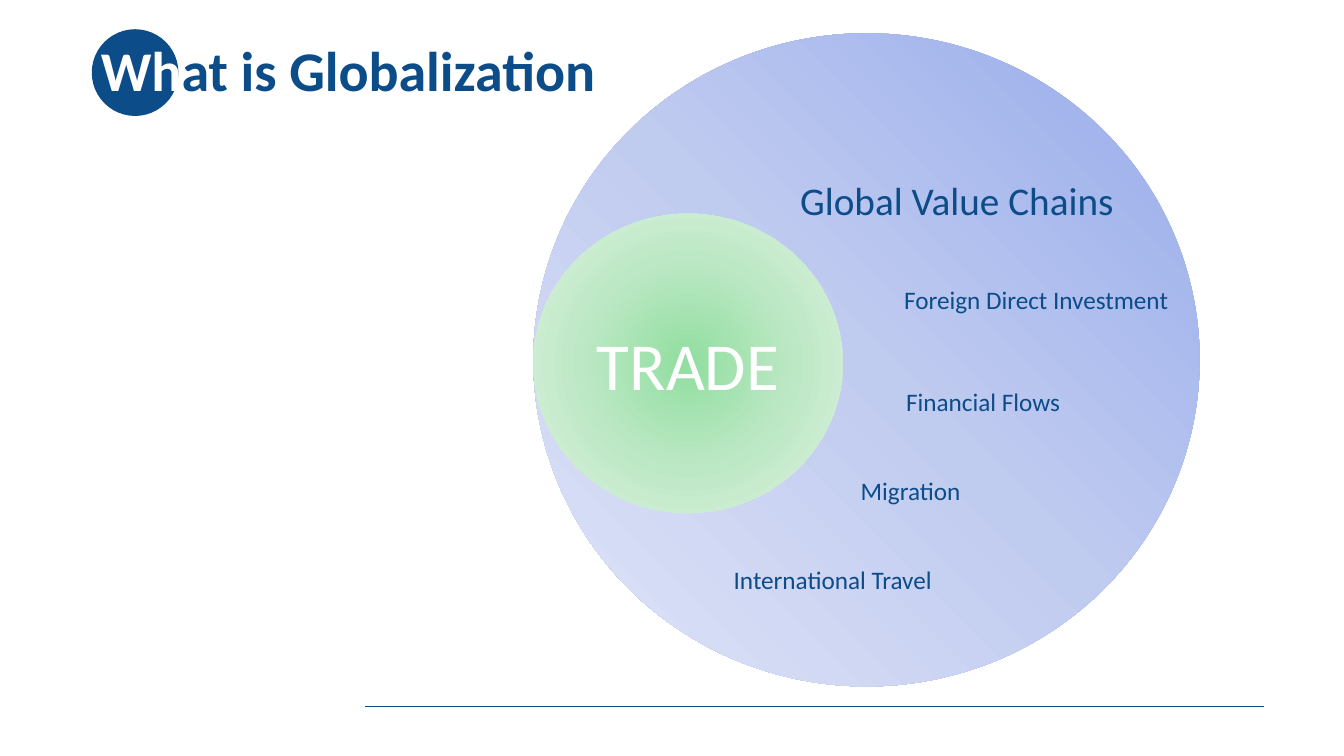
from lxml import etree
from pptx import Presentation
from pptx.dml.color import RGBColor
from pptx.enum import shapes, text
from pptx.oxml import parse_xml
from pptx.oxml.ns import nsdecls, qn
from pptx.util import Inches, Pt

WIDTH, HEIGHT = Inches(13.333), Inches(7.5)
FONT = "Calibri"
COLORS = {"navy": "0C4C88", "white": "FFFFFF"}
BLUES = ("96ABEA", "C0CBF0", "E0E5F7")
GREENS = ("91DEA0", "BDE8C5", "DFF3E3")
DIAGONAL = '<a:lin ang="8100000" scaled="0"/>'
RADIAL = ('<a:path path="circle">'
          '<a:fillToRect l="50000" t="50000" r="50000" b="50000"/></a:path>')
TOPICS = [
    ("Global Value Chains", (55.05, 22.67, 32.03, 7.6), 28),
    ("Foreign Direct Investment", (62.78, 36.93, 30.83, 5.33), 18),
    ("Financial Flows", (62.93, 50.4, 23.03, 5.33), 18),
    ("Migration", (59.55, 62.27, 19.88, 5.33), 18),
    ("International Travel", (50.1, 74, 24.3, 5.33), 18),
]


def area(left, top, width, height):
    """Turn percentages of the slide's width and height into lengths."""
    return [round(share * side / 100) for share, side in
            zip((left, top, width, height), (WIDTH, HEIGHT) * 2)]


def color(name):
    """Return a named colour."""
    return RGBColor.from_string(COLORS[name])


def add_span(para, words, size=18, fill="navy", bold=False):
    """Add formatted text to a paragraph."""
    span = para.add_run()
    span.text = words
    span.font.name, span.font.size, span.font.bold = FONT, Pt(size), bold
    span.font.color.rgb = color(fill)


def add_circle(page, place, fill="navy"):
    """Add a plain round shape without outline."""
    circle = page.shapes.add_shape(shapes.MSO_SHAPE.OVAL, *area(*place))
    circle.shadow.inherit = False
    circle.fill.solid()
    circle.fill.fore_color.rgb = color(fill)
    circle.line.fill.background()
    return circle


def set_gradient(shape, tones, direction):
    """Replace a solid fill with evenly spaced gradient stops."""
    step = 100000 // (len(tones) - 1)
    stops = "".join(f'<a:gs pos="{i * step}"><a:srgbClr val="{tone}"/></a:gs>'
                    for i, tone in enumerate(tones))
    gradient = parse_xml(f'<a:gradFill {nsdecls("a")} rotWithShape="1">'
                         f'<a:gsLst>{stops}</a:gsLst>{direction}</a:gradFill>')
    props = shape.element.spPr
    props.replace(props.find(qn("a:solidFill")), gradient)


def add_rule(page, left, right, top):
    """Add the thin horizontal line at the foot of the slide."""
    start_x, start_y, end_x, end_y = area(left, top, right, top)
    rule = page.shapes.add_connector(
        shapes.MSO_CONNECTOR.STRAIGHT, start_x, start_y, end_x, end_y)
    rule.line.color.rgb = color("navy")
    rule.line.width = Pt(0.5)
    etree.SubElement(rule.element.spPr, qn("a:effectLst"))


def add_topic(page, words, place, size):
    """Add an indented topic label."""
    box = page.shapes.add_textbox(*area(*place))
    box.text_frame.word_wrap = True
    box.text_frame.auto_size = text.MSO_AUTO_SIZE.SHAPE_TO_FIT_TEXT
    para = box.text_frame.paragraphs[0]
    para.level = 1
    para._p.get_or_add_pPr().set("marL", str(Inches(0.5)))
    add_span(para, words, size=size)


def set_title(page, place):
    """Place the two-coloured title in front of the circles."""
    title = page.shapes.title
    title.left, title.top, title.width, title.height = area(*place)
    frame = title.text_frame
    frame.auto_size = text.MSO_AUTO_SIZE.NONE
    frame.vertical_anchor = text.MSO_ANCHOR.MIDDLE
    para = frame.paragraphs[0]
    para.alignment = text.PP_ALIGN.LEFT
    para.line_spacing = 0.9
    add_span(para, "Wh", size=40, fill="white", bold=True)
    add_span(para, "at is Globalization", size=40, bold=True)
    title.element.getparent().append(title.element)


def main():
    """Build the slide and save it."""
    deck = Presentation()
    deck.slide_width, deck.slide_height = WIDTH, HEIGHT
    page = deck.slides.add_slide(deck.slide_layouts.get_by_name("Title Only"))
    add_rule(page, 27.15, 94.05, 93.47)
    add_circle(page, (6.83, 3.87, 6.45, 11.47))
    globe = add_circle(page, (39.68, 4.4, 49.58, 86.4))
    set_gradient(globe, BLUES, DIAGONAL)
    trade = add_circle(page, (39.68, 28.27, 23.03, 39.6))
    set_gradient(trade, GREENS, RADIAL)
    trade.text_frame.vertical_anchor = text.MSO_ANCHOR.MIDDLE
    para = trade.text_frame.paragraphs[0]
    para.alignment = text.PP_ALIGN.CENTER
    add_span(para, "TRADE", size=48, fill="white")
    set_title(page, (6.75, 1.47, 79.2, 16.4))
    for words, place, size in TOPICS:
        add_topic(page, words, place, size)
    deck.save("out.pptx")


if __name__ == "__main__":
    main()
